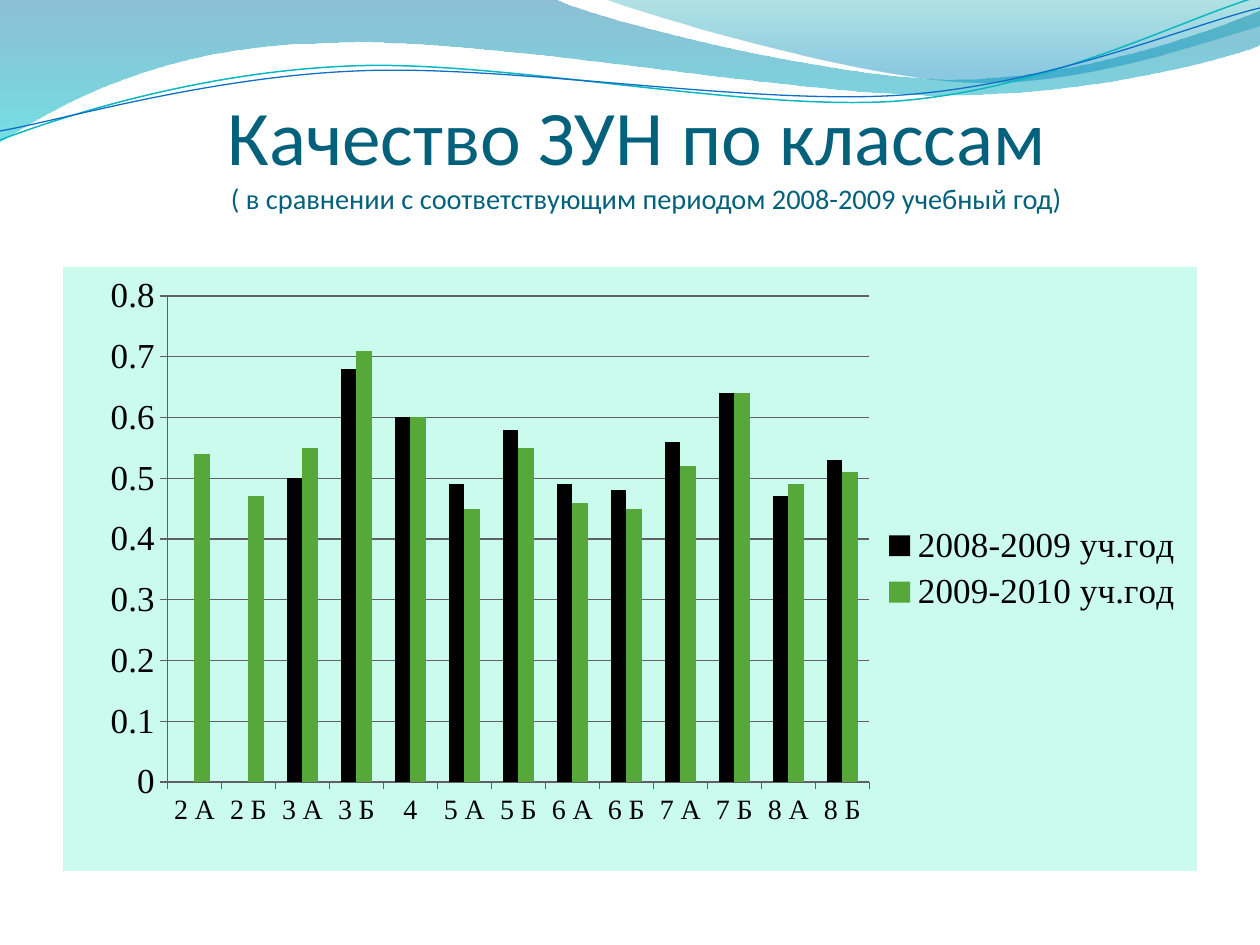
from lxml.etree import SubElement
from pptx import Presentation
from pptx.chart.data import CategoryChartData
from pptx.dml.color import RGBColor
from pptx.enum.chart import XL_CHART_TYPE, XL_LEGEND_POSITION, XL_TICK_MARK
from pptx.enum.text import MSO_ANCHOR, PP_ALIGN
from pptx.oxml import parse_xml
from pptx.oxml.ns import nsdecls, qn
from pptx.util import Pt

PX = 914400 / 126


class Theme:
    title, text, grid, panel = "04617B", "000000", "606060", "CAFBED"
    bars = ("000000", "55A839")
    # Gradient stops: position, colour, opacity in percent
    wave = ((0, "0074A1", 45), (1, "00C6CF", 55))
    crest = ((0, "00A1A9", 30), (0.8, "008BBF", 45))
    teal, blue = "0AB8BF", "0F6FC6"
    head, body = "Calibri", "Times New Roman"
    big, small, label, tick = 44.1, 16.2, 20, 16


# Each outline is a start point, then lines (2 numbers) or curves (6 numbers)
WAVE = [(0, 0), (554, -1), (600, 21, 837, 79, 955, 79),
        (1075, 79, 1207, 33, 1260, 11), (1261, 45),
        (1239, 55, 1096, 96, 940, 95), (783, 95, 481, 35, 324, 43),
        (163, 45, 58, 105, -1, 142), (0, 0)]
CREST = [(604, -1), (641, 14, 859, 78, 969, 82),
         (1079, 87, 1211, 40, 1260, 26), (1260, 0), (604, -1)]
UPPER = [(0, 140), (60, 117, 199, 72, 349, 66),
         (498, 59, 747, 112, 898, 101), (1050, 89, 1182, 19, 1257, -3)]
LOWER = [(0, 131), (59, 121, 207, 77, 357, 71),
         (508, 64, 752, 106, 903, 95), (1053, 84, 1186, 26, 1260, 8)]

GRADES = ["2 А", "2 Б", "3 А", "3 Б", "4", "5 А", "5 Б", "6 А", "6 Б",
          "7 А", "7 Б", "8 А", "8 Б"]
MARKS = {
    "2008-2009 уч.год": [None, None, 0.5, 0.68, 0.6, 0.49, 0.58, 0.49, 0.48,
                         0.56, 0.64, 0.47, 0.53],
    "2009-2010 уч.год": [0.54, 0.47, 0.55, 0.71, 0.6, 0.45, 0.55, 0.46, 0.45,
                         0.52, 0.64, 0.49, 0.51],
}


def rgb(code):
    return RGBColor.from_string(code)


def emu(*nums):
    return [round(n * PX) for n in nums]


def outline(slide, box, steps, close):
    left, top = box[:2]
    pts = [emu(left + step[i], top + step[i + 1])
           for step in steps for i in range(0, len(step), 2)]
    form = slide.shapes.build_freeform(*pts[0])
    form.add_line_segments(pts[1:], close=close)
    shape = form.convert_to_shape()
    shape.shadow.inherit = False
    # Join the three points of each curve into one Bezier segment
    lines = iter(list(shape._element.iter(qn("a:lnTo"))))
    for step in steps[1:]:
        group = [next(lines) for _ in range(len(step) // 2)]
        if len(group) == 3:
            curve = parse_xml(f'<a:cubicBezTo {nsdecls("a")}/>')
            group[0].addprevious(curve)
            for line in group:
                curve.append(line[0])
                line.getparent().remove(line)
    return shape


def add_waves(slide, box):
    # Shaded bands
    for steps, stops in ((WAVE, Theme.wave), (CREST, Theme.crest)):
        band = outline(slide, box, steps, True)
        band.line.fill.background()
        band.fill.gradient()
        band.fill.gradient_angle = 270
        for stop, (pos, code, _) in zip(band.fill.gradient_stops, stops):
            stop.position = pos
            stop.color.rgb = rgb(code)
        nodes = band._element.spPr.iter(qn("a:srgbClr"))
        for node, (_, _, alpha) in zip(nodes, stops):
            SubElement(node, qn("a:alpha"), val=str(alpha * 1000))
    # Thin lines
    for steps, code, width in ((UPPER, Theme.teal, 0.85),
                               (LOWER, Theme.blue, 0.75)):
        curve = outline(slide, box, steps, False)
        curve.fill.background()
        curve.line.color.rgb = rgb(code)
        curve.line.width = Pt(width)


def add_title(slide, box):
    frame = slide.shapes.add_textbox(*emu(*box)).text_frame
    frame.word_wrap = True
    frame.vertical_anchor = MSO_ANCHOR.BOTTOM
    frame.margin_left = frame.margin_right = frame.margin_bottom = 0
    para = frame.paragraphs[0]
    para.text = ("Качество ЗУН по классам \v"
                 "( в сравнении с соответствующим периодом 2008-2009 учебный год)")
    para.alignment = PP_ALIGN.CENTER
    for run, size in zip(para.runs, (Theme.big, Theme.small)):
        run.font.name = Theme.head
        run.font.size = Pt(size)
        run.font.color.rgb = rgb(Theme.title)


def add_marks(slide, box):
    data = CategoryChartData()
    data.categories = GRADES
    for name, vals in MARKS.items():
        data.add_series(name, vals)
    chart = slide.shapes.add_chart(
        XL_CHART_TYPE.COLUMN_CLUSTERED, *emu(*box), data).chart
    chart.has_title = False
    chart.font.name = Theme.body
    chart.font.size = Pt(Theme.label)
    chart.font.color.rgb = rgb(Theme.text)
    # Bars
    plot = chart.plots[0]
    plot.gap_width, plot.overlap, plot.vary_by_categories = 150, 0, False
    for row, code in zip(plot.series, Theme.bars):
        row.format.fill.solid()
        row.format.fill.fore_color.rgb = rgb(code)
        row.invert_if_negative = False
    # Axes and grid
    cats, vals = chart.category_axis, chart.value_axis
    cats.tick_labels.font.size = Pt(Theme.tick)
    vals.minimum_scale, vals.maximum_scale, vals.major_unit = 0, 0.8, 0.1
    vals.has_major_gridlines = True
    for axis in (cats, vals):
        axis.major_tick_mark = XL_TICK_MARK.OUTSIDE
    for part in (cats, vals, vals.major_gridlines):
        part.format.line.color.rgb = rgb(Theme.grid)
        part.format.line.width = Pt(0.75)
    # Legend
    chart.has_legend = True
    chart.legend.position = XL_LEGEND_POSITION.RIGHT
    chart.legend.include_in_layout = False
    # Panel colour
    root = chart._chartSpace
    root.find(qn("c:txPr")).addprevious(parse_xml(
        f'<c:spPr {nsdecls("c", "a")}><a:solidFill><a:srgbClr val="{Theme.panel}"/>'
        '</a:solidFill><a:ln><a:noFill/></a:ln></c:spPr>'))
    # Plot position
    area = root.find(".//" + qn("c:plotArea"))
    for old in area.findall(qn("c:layout")):
        area.remove(old)
    layout = parse_xml(f'<c:layout {nsdecls("c")}/>')
    area.insert(0, layout)
    manual = SubElement(layout, qn("c:manualLayout"))
    for tag, val in (("layoutTarget", "inner"), ("xMode", "edge"),
                     ("yMode", "edge"), ("x", "0.092"), ("y", "0.048"),
                     ("w", "0.619"), ("h", "0.805")):
        SubElement(manual, qn("c:" + tag), val=val)


def main():
    deck = Presentation()
    deck.slide_width, deck.slide_height = emu(1260, 945)
    slide = deck.slides.add_slide(deck.slide_layouts[6])
    add_waves(slide, (0, 0, 1260, 142))
    add_title(slide, (69, 98, 1154, 117))
    add_marks(slide, (63, 267, 1134, 604))
    deck.save("out.pptx")


if __name__ == "__main__":
    main()
